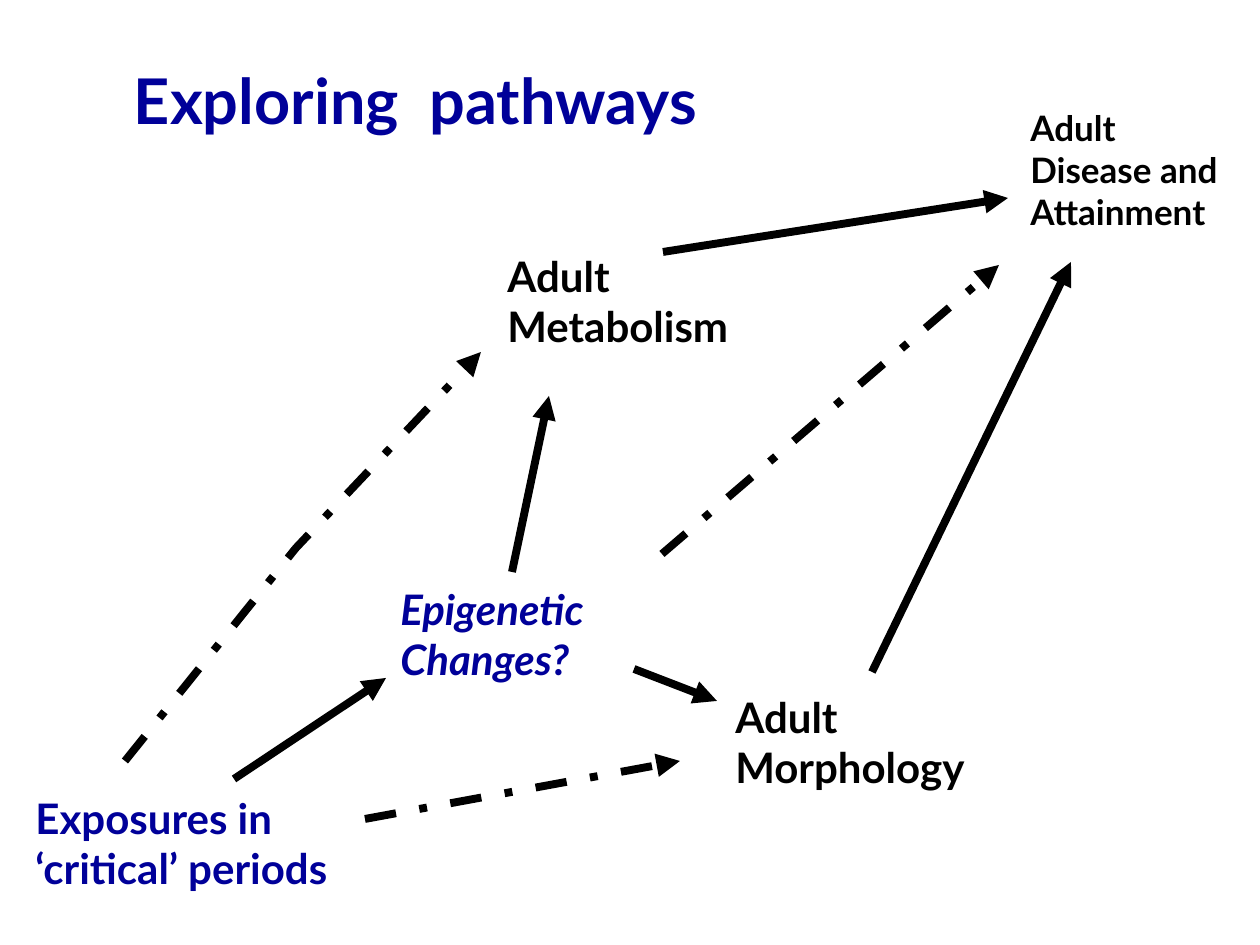
from lxml.etree import SubElement
from pptx import Presentation
from pptx.dml.color import RGBColor
from pptx.enum.dml import MSO_LINE_DASH_STYLE as Dash
from pptx.enum.shapes import MSO_CONNECTOR as Connector
from pptx.enum.text import MSO_ANCHOR as Anchor, MSO_AUTO_SIZE as AutoSize, PP_ALIGN as Align
from pptx.oxml.ns import qn
from pptx.util import Pt

PX = 914400 // 126
COLORS = {"blue": "000099", "black": "000000"}

deck = Presentation()
deck.slide_width, deck.slide_height = 1260 * PX, 945 * PX
page = deck.slides.add_slide(deck.slide_layouts[5])


def write(frame, text, size=24, color="black", italic=False, align=Align.LEFT):
    for index, line in enumerate(text.split("\n")):
        para = frame.add_paragraph() if index else frame.paragraphs[0]
        para.alignment = align
        span = para.add_run()
        span.text = line
        font = span.font
        font.name, font.size, font.bold, font.italic = "Lato", Pt(size), True, italic
        font.color.rgb = RGBColor.from_string(COLORS[color])


def style_arrow(arrow, dashed):
    line = arrow.line
    line.color.rgb = RGBColor.from_string(COLORS["black"])
    line.width = Pt(4.5)
    if dashed:
        line.dash_style = Dash.DASH_DOT
    properties = arrow._element.spPr
    SubElement(properties.find(qn("a:ln")), qn("a:tailEnd"), type="triangle")
    if properties.find(qn("a:effectLst")) is None:
        SubElement(properties, qn("a:effectLst"))


# Title
title = page.shapes.title
title.left, title.top, title.width, title.height = (n * PX for n in (40, 53, 751, 93))
title.text_frame.vertical_anchor = Anchor.MIDDLE
title.text_frame.auto_size = AutoSize.NONE
write(title.text_frame, "Exploring  pathways", size=36, color="blue", align=Align.CENTER)

# Stages: text, left, top, width, height, wrap, format
stages = [
    ("Exposures in ‘critical’ periods", 23, 786, 388, 113, True, {"color": "blue"}),
    ("Epigenetic\nChanges?", 388, 577, 266, 115, True, {"color": "blue", "italic": True}),
    ("Adult\nMorphology", 723, 685, 276, 113, False, {}),
    ("Adult\nDisease and Attainment", 1018, 100, 242, 139, True, {"size": 20}),
    ("Adult\nMetabolism", 495, 244, 270, 113, False, {}),
]
for text, left, top, width, height, wrap, style in stages:
    box = page.shapes.add_textbox(left * PX, top * PX, width * PX, height * PX)
    box.text_frame.word_wrap = wrap
    box.text_frame.auto_size = AutoSize.SHAPE_TO_FIT_TEXT
    write(box.text_frame, text, **style)

# Straight pathways: start, end, dashed
pathways = [
    ((872, 672), (1071, 262), False),  # morphology to disease
    ((365, 819), (680, 761), True),    # exposures to morphology
    ((663, 252), (1008, 198), False),  # metabolism to disease
    ((234, 779), (386, 678), False),   # exposures to epigenetic changes
    ((634, 669), (717, 701), False),   # epigenetic changes to morphology
    ((512, 572), (549, 396), False),   # epigenetic changes to metabolism
    ((662, 554), (999, 265), True),    # epigenetic changes to disease
]
for start, end, dashed in pathways:
    arrow = page.shapes.add_connector(Connector.STRAIGHT, *(n * PX for n in start + end))
    style_arrow(arrow, dashed)

# Bent pathway from exposures to metabolism
builder = page.shapes.build_freeform(125, 761, scale=PX)
builder.add_line_segments([(296, 548), (481, 352)], close=False)
bent = builder.convert_to_shape()
bent.fill.background()
bent.shadow.inherit = False
# The line element must exist before the effect list, which python-pptx orders itself
style_arrow(bent, True)

deck.save("out.pptx")
